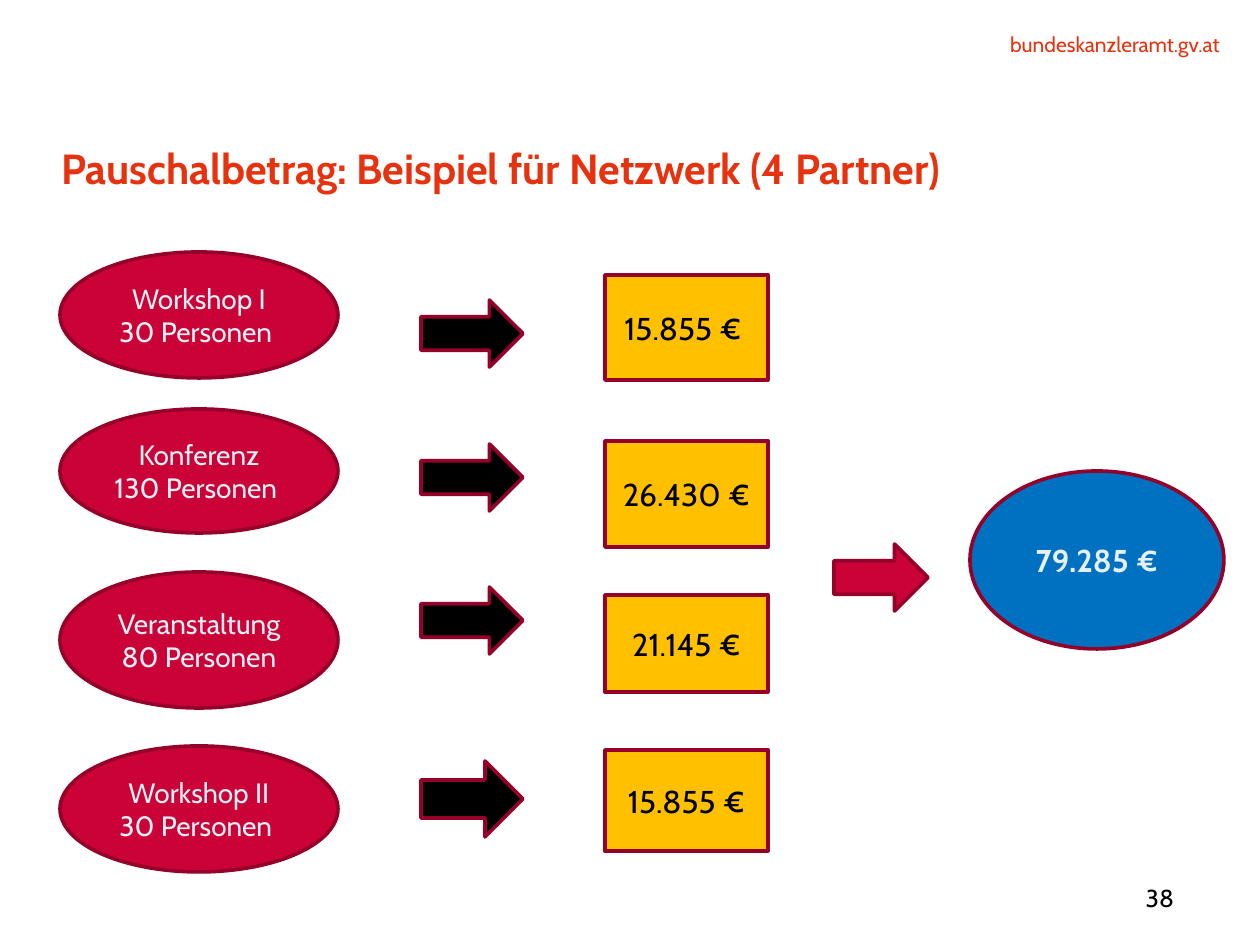
import pptx
import pptx.dml.color
import pptx.enum.shapes
import pptx.enum.text
import pptx.util

SCALE = 914400 / 126
FONT = "Cabin"
COLORS = {
    "red": "E6320F",
    "crimson": "CA0237",
    "outline": "950129",
    "black": "000000",
    "amber": "FFC000",
    "blue": "0070C0",
    "pale": "E6EFF3",
}
SHAPES = pptx.enum.shapes.MSO_SHAPE
ALIGN = pptx.enum.text.PP_ALIGN
ANCHOR = pptx.enum.text.MSO_ANCHOR

EVENT_LEFT, EVENT_WIDTH = 60, 278
ARROW_LEFT, ARROW_WIDTH = 421, 102
AMOUNT_LEFT, AMOUNT_WIDTH = 605, 163
ROWS = [
    (["Workshop I", "30 Personen "], (252, 126), (300, 67), "15.855 € ", (275, 105)),
    (["Konferenz 130 Personen "], (409, 124), (444, 67), "26.430 €", (441, 106)),
    (["Veranstaltung", "80 Personen"], (572, 136), (587, 67), "21.145 €", (595, 97)),
    ([" Workshop II ", "30 Personen "], (746, 126), (761, 76), "15.855 €", (750, 101)),
]


def px(length):
    return pptx.util.Emu(round(length * SCALE))


def rgb(name):
    return pptx.dml.color.RGBColor.from_string(COLORS[name])


def write_text(frame, lines, size, color, align, bold=False, line_spacing=None):
    frame.word_wrap = True
    for index, line in enumerate(lines):
        paragraph = frame.add_paragraph() if index else frame.paragraphs[0]
        paragraph.alignment = align
        if line_spacing:
            paragraph.line_spacing = pptx.util.Pt(line_spacing)
        run = paragraph.add_run()
        run.text = line
        font_format = {"name": FONT, "size": pptx.util.Pt(size), "bold": bold}
        for name, value in font_format.items():
            setattr(run.font, name, value)
        run.font.color.rgb = rgb(color)


def add_label(slide, box, text, size, color, align, anchor=ANCHOR.TOP, **text_format):
    frame = slide.shapes.add_textbox(*map(px, box)).text_frame
    for side in ("left", "top", "right", "bottom"):
        setattr(frame, f"margin_{side}", 0)
    frame.vertical_anchor = anchor
    write_text(frame, [text], size, color, align, **text_format)


def add_figure(slide, kind, box, fill):
    shape = slide.shapes.add_shape(kind, *map(px, box))
    shape.shadow.inherit = False
    shape.fill.solid()
    shape.fill.fore_color.rgb = rgb(fill)
    shape.line.color.rgb = rgb("outline")
    shape.line.width = pptx.util.Pt(2.08)
    return shape


def add_text_figure(slide, kind, box, fill, lines, size, color, bold=False):
    frame = add_figure(slide, kind, box, fill).text_frame
    frame.vertical_anchor = ANCHOR.MIDDLE
    write_text(frame, lines, size, color, ALIGN.CENTER, bold)


def add_row(slide, event, event_span, arrow_span, amount, amount_span):
    event_top, event_height = event_span
    arrow_top, arrow_height = arrow_span
    amount_top, amount_height = amount_span
    add_text_figure(slide, SHAPES.OVAL, (EVENT_LEFT, event_top, EVENT_WIDTH, event_height),
                    "crimson", event, 16, "pale")
    add_figure(slide, SHAPES.RIGHT_ARROW,
               (ARROW_LEFT, arrow_top, ARROW_WIDTH, arrow_height), "black")
    add_text_figure(slide, SHAPES.RECTANGLE,
                    (AMOUNT_LEFT, amount_top, AMOUNT_WIDTH, amount_height),
                    "amber", [amount], 18, "black")


def main():
    """Build the lump-sum example slide for a network of four partners."""
    presentation = pptx.Presentation()
    presentation.slide_width = px(1260)
    presentation.slide_height = px(945)
    slide = presentation.slides.add_slide(presentation.slide_layouts[6])

    add_label(slide, (916, 32, 304, 25), "bundeskanzleramt.gv.at", 12, "red", ALIGN.RIGHT)
    add_label(slide, (61, 140, 1100, 115), "Pauschalbetrag: Beispiel für Netzwerk (4 Partner)",
              24, "red", ALIGN.LEFT, bold=True, line_spacing=30)
    for row in ROWS:
        add_row(slide, *row)
    add_figure(slide, SHAPES.RIGHT_ARROW, (834, 544, 94, 67), "crimson")
    add_text_figure(slide, SHAPES.OVAL, (970, 471, 254, 178), "blue",
                    ["79.285 €"], 18, "pale", bold=True)
    add_label(slide, (1062, 880, 112, 36), "38", 14, "black", ALIGN.RIGHT, ANCHOR.MIDDLE)

    presentation.save("out.pptx")


if __name__ == "__main__":
    main()
